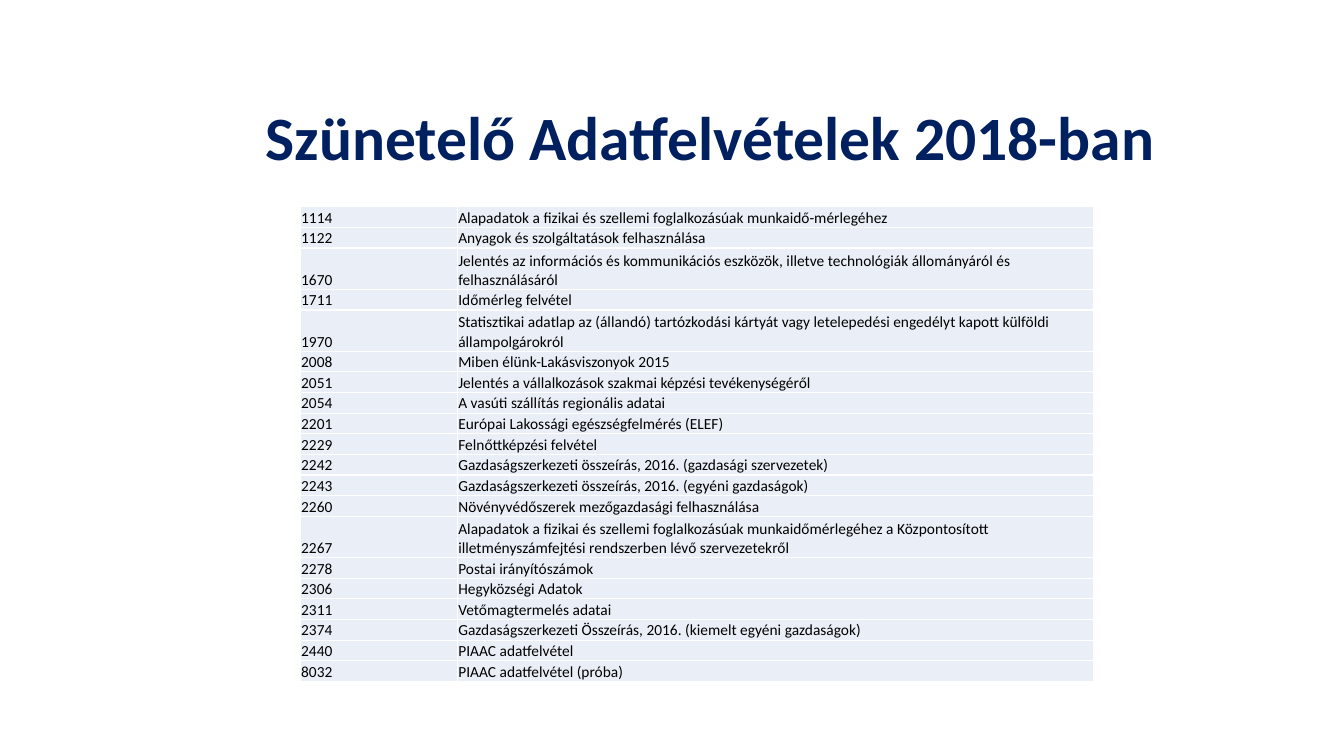
from dataclasses import dataclass

from lxml.etree import SubElement
from pptx import Presentation
from pptx.dml.color import RGBColor
from pptx.enum.text import MSO_ANCHOR as Anchor
from pptx.oxml.ns import qn
from pptx.slide import Slide
from pptx.table import _Cell as Cell
from pptx.text.text import TextFrame
from pptx.util import Cm, Pt

NAVY = RGBColor(0x00, 0x20, 0x60)
BLACK = RGBColor(0x00, 0x00, 0x00)
WHITE = RGBColor(0xFF, 0xFF, 0xFF)
PALE_BLUE = RGBColor(0xEA, 0xEF, 0xF7)
FONT = "Calibri"
LINE_HEIGHT = 0.52
COLUMN_WIDTHS = (3.96, 16.03)


@dataclass(frozen=True)
class Survey:
    code: str
    title: str
    lines: int = 1


SURVEYS = [
    Survey("1114", "Alapadatok a fizikai és szellemi foglalkozásúak munkaidő-mérlegéhez"),
    Survey("1122", "Anyagok és szolgáltatások felhasználása"),
    Survey("1670", "Jelentés az információs és kommunikációs eszközök, illetve "
                   "technológiák állományáról és felhasználásáról", 2),
    Survey("1711", "Időmérleg felvétel"),
    Survey("1970", "Statisztikai adatlap az (állandó) tartózkodási kártyát vagy "
                   "letelepedési engedélyt kapott külföldi állampolgárokról", 2),
    Survey("2008", "Miben élünk-Lakásviszonyok 2015"),
    Survey("2051", "Jelentés a vállalkozások szakmai képzési tevékenységéről"),
    Survey("2054", "A vasúti szállítás regionális adatai"),
    Survey("2201", "Európai Lakossági egészségfelmérés (ELEF)"),
    Survey("2229", "Felnőttképzési felvétel"),
    Survey("2242", "Gazdaságszerkezeti összeírás, 2016. (gazdasági szervezetek)"),
    Survey("2243", "Gazdaságszerkezeti összeírás, 2016. (egyéni gazdaságok)"),
    Survey("2260", "Növényvédőszerek mezőgazdasági felhasználása"),
    Survey("2267", "Alapadatok a fizikai és szellemi foglalkozásúak munkaidőmérlegéhez "
                   "a Központosított illetményszámfejtési rendszerben lévő szervezetekről", 2),
    Survey("2278", "Postai irányítószámok"),
    Survey("2306", "Hegyközségi Adatok"),
    Survey("2311", "Vetőmagtermelés adatai"),
    Survey("2374", "Gazdaságszerkezeti Összeírás, 2016. (kiemelt egyéni gazdaságok)"),
    Survey("2440", "PIAAC adatfelvétel"),
    Survey("8032", "PIAAC adatfelvétel (próba)"),
]


def write_text(frame: TextFrame, text: str, *, size: float, color: RGBColor,
               bold: bool = False, line_spacing: float = 1.0) -> None:
    paragraph = frame.paragraphs[0]
    paragraph.line_spacing = line_spacing
    run = paragraph.add_run()
    run.text = text
    run.font.name = FONT
    run.font.size = Pt(size)
    run.font.bold = bold
    run.font.color.rgb = color


def draw_borders(cell: Cell, color: RGBColor, width: float) -> None:
    properties = cell._tc.get_or_add_tcPr()
    for side in ("a:lnL", "a:lnR", "a:lnT", "a:lnB"):
        line = SubElement(properties, qn(side), w=str(Pt(width)))
        fill = SubElement(line, qn("a:solidFill"))
        SubElement(fill, qn("a:srgbClr"), val=str(color))


def draw_cell(cell: Cell, text: str) -> None:
    draw_borders(cell, WHITE, 1)
    cell.fill.solid()
    cell.fill.fore_color.rgb = PALE_BLUE
    cell.vertical_anchor = Anchor.BOTTOM
    cell.margin_left = cell.margin_right = cell.margin_top = Cm(0.02)
    cell.margin_bottom = Cm(0)
    write_text(cell.text_frame, text, size=11, color=BLACK)


def draw_title(slide: Slide, text: str) -> None:
    shape = slide.shapes.add_textbox(Cm(6.45), Cm(2.36), Cm(23.04), Cm(2.34))
    frame = shape.text_frame
    frame.word_wrap = True
    frame.vertical_anchor = Anchor.MIDDLE
    write_text(frame, text, size=44, color=NAVY, bold=True, line_spacing=0.9)


def draw_surveys(slide: Slide, surveys: list[Survey]) -> None:
    height = LINE_HEIGHT * sum(survey.lines for survey in surveys)
    shape = slide.shapes.add_table(len(surveys), len(COLUMN_WIDTHS), Cm(7.57), Cm(5.21),
                                   Cm(sum(COLUMN_WIDTHS)), Cm(height))
    table = shape.table
    table.first_row = False
    table.horz_banding = False
    for column, width in zip(table.columns, COLUMN_WIDTHS):
        column.width = Cm(width)
    for row, survey in zip(table.rows, surveys):
        row.height = Cm(LINE_HEIGHT * survey.lines)
        for cell, text in zip(row.cells, (survey.code, survey.title)):
            draw_cell(cell, text)


def main() -> None:
    presentation = Presentation()
    presentation.slide_width = Cm(33.87)
    presentation.slide_height = Cm(19.05)
    slide = presentation.slides.add_slide(presentation.slide_layouts[6])
    draw_title(slide, "Szünetelő Adatfelvételek 2018-ban")
    draw_surveys(slide, SURVEYS)
    presentation.save("out.pptx")


if __name__ == "__main__":
    main()
